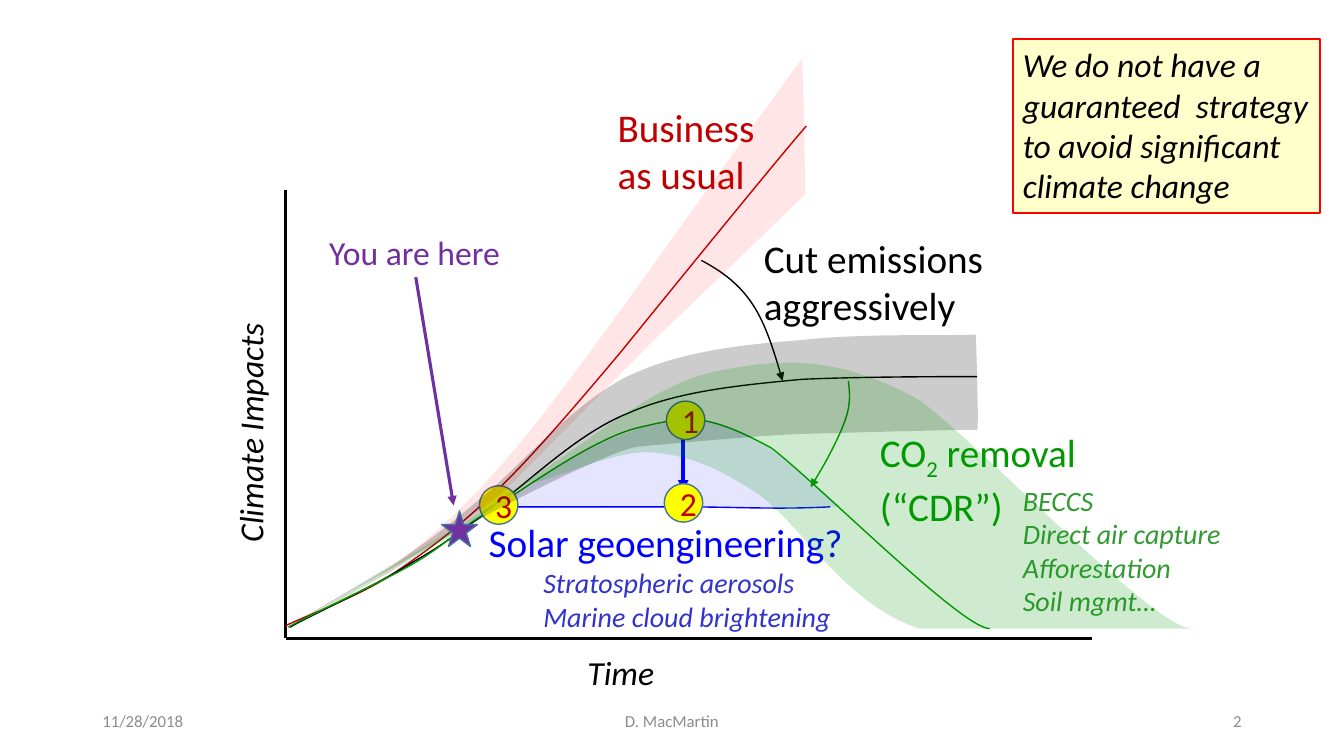
from lxml.etree import SubElement
from pptx import Presentation
from pptx.dml.color import RGBColor
from pptx.enum.shapes import MSO_CONNECTOR as CONN, MSO_SHAPE as SHAPE
from pptx.enum.text import MSO_ANCHOR as ANCHOR, MSO_AUTO_SIZE as AUTO, PP_ALIGN as ALIGN
from pptx.oxml.ns import qn
from pptx.util import Pt

COLORS = {
    "black": "000000", "gray": "8C8C8C", "crimson": "C00000", "red": "FF0000",
    "green": "009900", "leaf": "339933", "blue": "0000FF", "indigo": "3333CC",
    "purple": "7030A0", "yellow": "FFFF00", "cream": "FFFFCC", "edge": "43739E",
}

FOOTERS = [  # text, left, width, alignment
    ("11/28/2018", 66, 216, ALIGN.LEFT),
    ("D. MacMartin", 318, 324, ALIGN.CENTER),
    ("2", 678, 216, ALIGN.RIGHT),
]
AXES = [((204, 136), (204, 456)), ((780, 456), (204, 456))]

LABELS = [  # lines, box, size, colour, italic, wrap, rotation
    (["Time"], (412.5, 462, 63, 36), 24, "black", True, False, 0),
    (["Climate Impacts"], (92, 290, 173, 36), 24, "black", True, False, 270),
    (["Business as usual"], (434, 70.5, 134, 75), 28, "crimson", False, True, 0),
    (["CO~2~ removal (“CDR”)"], (621.5, 302.5, 172, 75), 28, "green", False, True, 0),
    (["Cut emissions aggressively"], (538.5, 163.5, 241, 75), 28, "black", False, True, 0),
    (["Solar geoengineering?"], (342, 367, 274, 41), 28, "blue", False, True, 0),
    (["BECCS", "Direct air capture", "Afforestation", "Soil mgmt…"],
     (723.5, 341.5, 157, 104), 20, "leaf", True, False, 0),
    (["Stratospheric aerosols", "Marine cloud brightening"],
     (381, 400.5, 221, 55), 20, "indigo", True, False, 0),
]
YOU_ARE_HERE = (["You are here"], (228, 162, 138, 36), 24, "purple", False, False, 0)
NOTE = "We do not have a guaranteed  strategy to avoid significant climate change"

# Outlines: start point, then segments; two numbers make a line, six a Bézier curve
SOLAR_AREA = [
    (354, 363), (383, 341, 394, 336, 409, 327), (425, 318, 435, 314, 446, 310),
    (459, 305, 469, 302, 480, 300), (490, 300, 498, 300, 510, 302),
    (521, 306, 534, 308, 549, 320), (563, 330, 592, 354, 600, 362), (354, 363)]
CURVES = [  # colour, arrowhead, outline
    ("crimson", False, [
        (204, 447), (216, 441, 251, 428, 276, 413), (300, 397, 323, 381, 351, 354),
        (379, 328, 416, 284, 443, 252), (469, 220, 555, 114, 576, 90)]),
    ("black", False, [
        (207, 448), (221, 440, 271, 417, 294, 402), (317, 389, 322, 384, 348, 366),
        (374, 348, 411, 310, 449, 295), (485, 279, 531, 275, 572, 271),
        (613, 269, 678, 269, 698, 269)]),
    ("blue", False, [(360, 362), (485, 362), (523, 362, 556, 364, 593, 362)]),
    ("black", True, [
        (501, 186), (514, 193, 526, 201, 536, 215), (546, 229, 553, 251, 559, 272)]),
    ("green", True, [
        (606, 272), (607, 281, 608, 289, 603, 302), (598, 315, 589, 332, 579, 348)]),
    ("green", False, [
        (206, 448), (221, 439, 275, 415, 298, 401), (321, 387, 322, 382, 348, 366),
        (375, 349, 425, 312, 458, 305), (492, 297, 505, 295, 551, 320),
        (585, 346, 687, 449, 707, 449)]),
]
BANDS = [  # colour, opacity in percent, outline
    ("red", 10, [
        (204, 447), (216, 440, 251, 426, 276, 408), (300, 390, 323, 371, 351, 340),
        (379, 310, 416, 259, 443, 222), (469, 186, 552, 70, 573, 42),
        (575, 94, 575, 139, 575, 139), (549, 164, 473, 238, 472, 238),
        (456, 254, 364, 347, 364, 347), (346, 365, 278, 408, 278, 409)]),
    ("black", 20, [
        (207, 448), (220, 438, 270, 411, 293, 395), (316, 379, 322, 374, 348, 352),
        (373, 331, 410, 288, 448, 269), (485, 251, 531, 246, 572, 243),
        (613, 238, 677, 240, 697, 239), (698, 266, 699, 307, 698, 307),
        (677, 307, 575, 310, 575, 310), (554, 310, 456, 319, 456, 319),
        (436, 321, 345, 369, 346, 369), (328, 378, 209, 446, 210, 446)]),
    ("green", 19, [
        (207, 449), (226, 438, 295, 400, 325, 381), (356, 362, 356, 356, 387, 336),
        (419, 317, 468, 273, 513, 265), (557, 256, 598, 253, 657, 286),
        (701, 318, 826, 451, 852, 449), (657, 449), (605, 433, 573, 376, 543, 354),
        (512, 333, 491, 325, 464, 323), (436, 322, 391, 345, 378, 345), (207, 449)]),
]
MARKERS = [("1", 476, 286.5), ("2", 474.5, 345.5), ("3", 342.5, 347)]
MARKER_SIZE = 27.5

prs = Presentation()
prs.slide_width, prs.slide_height = Pt(960), Pt(540)
slide = prs.slides.add_slide(prs.slide_layouts[6])
shapes = slide.shapes


def rgb(name):
    return RGBColor.from_string(COLORS[name])


def style_font(p, size, color, italic=False):
    p.font.name, p.font.size, p.font.italic = "Calibri", Pt(size), italic
    p.font.color.rgb = rgb(color)


def style_line(sp, color, width, arrow=False):
    sp.line.color.rgb, sp.line.width = rgb(color), Pt(width)
    if arrow:
        SubElement(sp.line._get_or_add_ln(), qn("a:tailEnd"), type="triangle")


def add_label(lines, box, size, color, italic, wrap, rotation):
    """Add a text box; text between tildes is set as subscript."""
    sp = shapes.add_textbox(*map(Pt, box))
    sp.rotation = rotation
    tf = sp.text_frame
    tf.word_wrap, tf.auto_size = wrap, AUTO.SHAPE_TO_FIT_TEXT
    for i, line in enumerate(lines):
        p = tf.add_paragraph() if i else tf.paragraphs[0]
        for k, part in enumerate(line.split("~")):
            r = p.add_run()
            r.text = part
            if k % 2:
                r._r.get_or_add_rPr().set("baseline", "-25000")
        style_font(p, size, color, italic)
    return sp


def add_straight(start, end, color, width, arrow=False):
    c = shapes.add_connector(CONN.STRAIGHT, *map(Pt, start + end))
    style_line(c, color, width, arrow)
    SubElement(c._element.spPr, qn("a:effectLst"))
    return c


def add_outline(outline, closed):
    """Build a freeform through all points, then turn triples into Bézier curves."""
    start, *segments = outline
    points = [seg[i:i + 2] for seg in segments for i in range(0, len(seg), 2)]
    builder = shapes.build_freeform(*start, scale=Pt(1))
    builder.add_line_segments(points, close=closed)
    sp = builder.convert_to_shape()
    sp.shadow.inherit = False
    steps = iter(sp._element.xpath(".//a:lnTo"))
    for seg in segments:
        first = next(steps)
        if len(seg) == 6:
            first.tag = qn("a:cubicBezTo")
            for _ in range(2):
                extra = next(steps)
                first.append(extra[0])
                extra.getparent().remove(extra)
    return sp


def add_area(color, opacity, outline):
    sp = add_outline(outline, True)
    sp.fill.solid()
    sp.fill.fore_color.rgb = rgb(color)
    fill = sp._element.spPr.find(qn("a:solidFill"))
    SubElement(fill[0], qn("a:alpha"), val=str(opacity * 1000))
    sp.line.fill.background()


def add_solid(kind, box, fill, line, width):
    sp = shapes.add_shape(kind, *map(Pt, box))
    sp.shadow.inherit = False
    sp.fill.solid()
    sp.fill.fore_color.rgb = rgb(fill)
    style_line(sp, line, width)
    return sp


for text, left, width, align in FOOTERS:
    sp = add_label([text], (left, 500.5, width, 29), 12, "gray", False, True, 0)
    sp.text_frame.auto_size = AUTO.NONE
    sp.text_frame.vertical_anchor = ANCHOR.MIDDLE
    sp.text_frame.paragraphs[0].alignment = align
for start, end in AXES:
    add_straight(start, end, "black", 2.25)
for label in LABELS:
    add_label(*label)

add_area("blue", 10, SOLAR_AREA)
for color, arrow, outline in CURVES:
    sp = add_outline(outline, False)
    sp.fill.background()
    style_line(sp, color, 1, arrow)
add_straight((488, 300), (488, 350.5), "blue", 2.5, True)

for number, left, top in MARKERS:
    sp = add_solid(SHAPE.OVAL, (left, top, MARKER_SIZE, MARKER_SIZE), "yellow", "edge", 1)
    sp.text_frame.vertical_anchor = ANCHOR.MIDDLE
    p = sp.text_frame.paragraphs[0]
    p.text, p.alignment = number, ALIGN.CENTER
    style_font(p, 24, "crimson")
for band in BANDS:
    add_area(*band)

add_solid(SHAPE.STAR_5_POINT, (315.5, 365, 25.5, 25.5), "purple", "edge", 1)
here = add_label(*YOU_ARE_HERE)
add_straight((297, 198), (324, 361), "purple", 2.25, True).begin_connect(here, 2)

note = add_solid(SHAPE.RECTANGLE, (723.5, 28, 219.5, 124), "cream", "red", 1.5)
note.text_frame.vertical_anchor = ANCHOR.TOP
note.text_frame.auto_size = AUTO.SHAPE_TO_FIT_TEXT
p = note.text_frame.paragraphs[0]
p.text, p.alignment = NOTE, ALIGN.LEFT
style_font(p, 24, "black", True)

prs.save("out.pptx")
